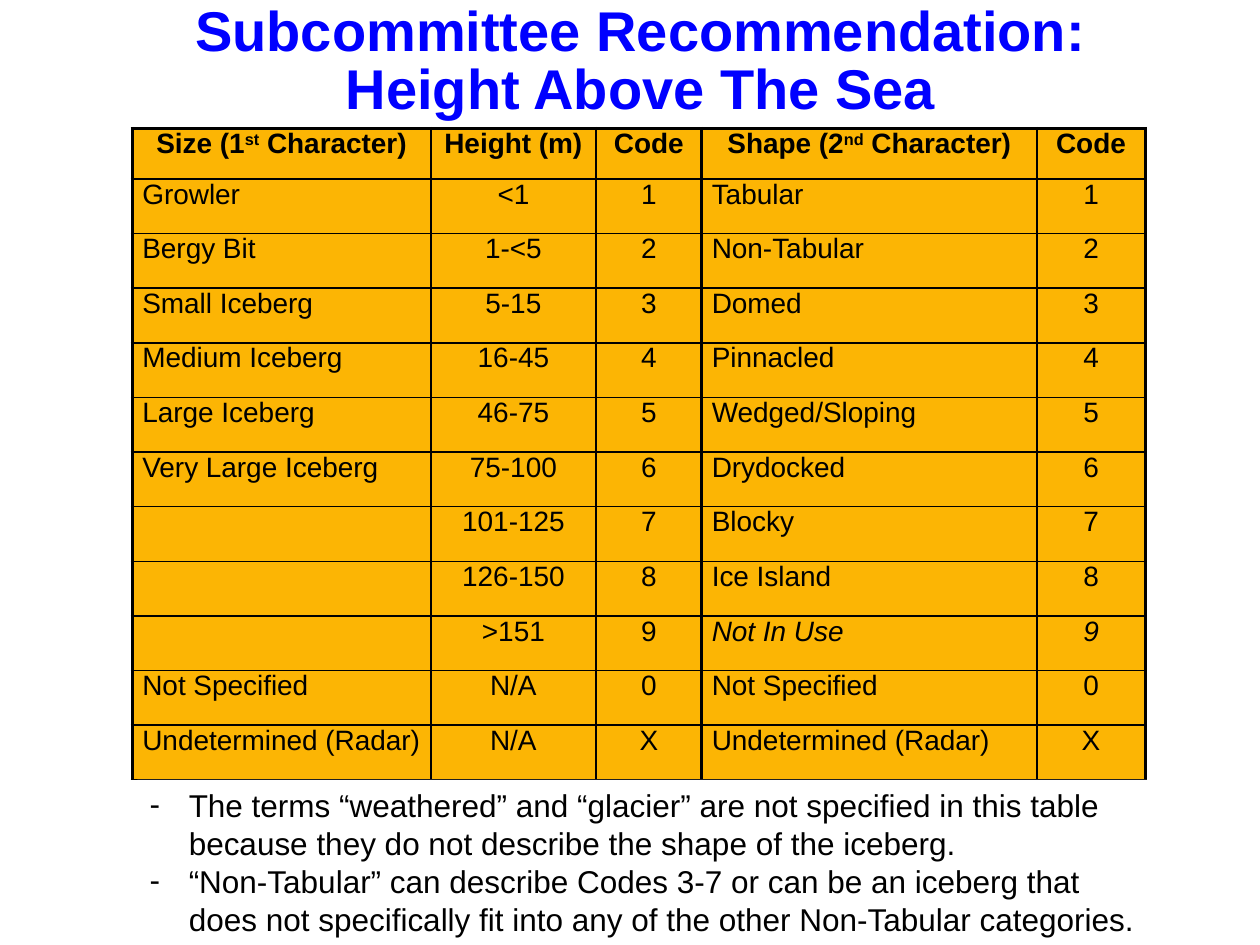
from dataclasses import dataclass

from lxml.etree import SubElement
from pptx import Presentation
from pptx.dml.color import RGBColor
from pptx.enum.shapes import MSO_SHAPE as Shape
from pptx.enum.text import MSO_ANCHOR as Anchor, MSO_AUTO_SIZE as AutoSize, PP_ALIGN as Align
from pptx.oxml.ns import qn
from pptx.util import Inches, Pt

COLORS = {"title": "0000FF", "ink": "000000", "cell": "FCB504", "paper": "FFFFFF"}
FONT = "Arial"
THIN, THICK = 1, 2.25


@dataclass(frozen=True)
class Column:
    header: str
    width: float
    align: Align
    thick_sides: str


@dataclass(frozen=True)
class IcebergCode:
    size: str
    height: str
    shape: str
    code: str
    italic_shape: bool = False

    def texts(self) -> list[str]:
        return [self.size, self.height, self.code, self.shape, self.code]


COLUMNS = [
    Column("Size (1^st^ Character)", 2.37, Align.LEFT, "L"),
    Column("Height (m)", 1.31, Align.CENTER, ""),
    Column("Code", 0.84, Align.CENTER, "R"),
    Column("Shape (2^nd^ Character)", 2.66, Align.LEFT, "L"),
    Column("Code", 0.86, Align.CENTER, "R"),
]
CODES = [
    IcebergCode("Growler", "<1", "Tabular", "1"),
    IcebergCode("Bergy Bit", "1-<5", "Non-Tabular", "2"),
    IcebergCode("Small Iceberg", "5-15", "Domed", "3"),
    IcebergCode("Medium Iceberg", "16-45", "Pinnacled", "4"),
    IcebergCode("Large Iceberg", "46-75", "Wedged/Sloping", "5"),
    IcebergCode("Very Large Iceberg", "75-100", "Drydocked", "6"),
    IcebergCode("", "101-125", "Blocky", "7"),
    IcebergCode("", "126-150", "Ice Island", "8"),
    IcebergCode("", ">151", "Not In Use", "9", italic_shape=True),
    IcebergCode("Not Specified", "N/A", "Not Specified", "0"),
    IcebergCode("Undetermined (Radar)", "N/A", "Undetermined (Radar)", "X"),
]
TITLE = "Subcommittee Recommendation:\nHeight Above The Sea"
NOTES = (
    "The terms “weathered” and “glacier” are not specified in this table "
    "because they do not describe the shape of the iceberg.\n"
    "“Non-Tabular” can describe Codes 3-7 or can be an iceberg that "
    "does not specifically fit into any of the other Non-Tabular categories."
)


def style_font(font, size: float, color: str, bold: bool = False, italic: bool = False) -> None:
    font.name = FONT
    font.size = Pt(size)
    font.bold = bold
    font.italic = italic
    font.color.rgb = RGBColor.from_string(COLORS[color])


def add_borders(cell, thick_sides: str) -> None:
    properties = cell._tc.get_or_add_tcPr()
    for side in "LRTB":
        width = THICK if side in thick_sides else THIN
        line = SubElement(properties, qn(f"a:ln{side}"), w=str(Pt(width)))
        fill = SubElement(line, qn("a:solidFill"))
        SubElement(fill, qn("a:srgbClr"), val=COLORS["ink"])


def fill_cell(cell, text: str, align: Align, thick_sides: str,
              bold: bool = False, italic: bool = False) -> None:
    add_borders(cell, thick_sides)
    cell.fill.solid()
    cell.fill.fore_color.rgb = RGBColor.from_string(COLORS["cell"])
    cell.margin_left = cell.margin_right = Inches(0.08)
    cell.margin_top = cell.margin_bottom = 0
    paragraph = cell.text_frame.paragraphs[0]
    paragraph.alignment = align
    style_font(paragraph.font, 16, "ink", bold, italic)
    if not text:
        return
    for index, part in enumerate(text.split("^")):
        run = paragraph.add_run()
        run.text = part
        style_font(run.font, 16, "ink", bold, italic)
        if index % 2:
            run._r.get_or_add_rPr().set("baseline", "30000")


def add_title(slide) -> None:
    title = slide.shapes.add_textbox(Inches(1.09), 0, Inches(7.99), Inches(1.02))
    frame = title.text_frame
    frame.word_wrap = True
    frame.auto_size = AutoSize.SHAPE_TO_FIT_TEXT
    frame.text = TITLE
    for paragraph in frame.paragraphs:
        paragraph.alignment = Align.CENTER
        paragraph.line_spacing = 0.85
        for run in paragraph.runs:
            style_font(run.font, 32, "title", bold=True)


def add_code_table(slide) -> None:
    table = slide.shapes.add_table(
        len(CODES) + 1, len(COLUMNS), Inches(1.05), Inches(1.02), Inches(8.04), Inches(5.17)
    ).table
    table.rows[0].height = Inches(0.4)
    for column_index, column in enumerate(COLUMNS):
        table.columns[column_index].width = Inches(column.width)
        fill_cell(table.cell(0, column_index), column.header, Align.CENTER,
                  column.thick_sides + "T", bold=True)
    for row_index, entry in enumerate(CODES, start=1):
        table.rows[row_index].height = Inches(4.77 / len(CODES))
        for column_index, (column, text) in enumerate(zip(COLUMNS, entry.texts())):
            fill_cell(table.cell(row_index, column_index), text, column.align,
                      column.thick_sides, italic=entry.italic_shape and column_index >= 3)


def add_notes(slide) -> None:
    notes = slide.shapes.add_shape(
        Shape.RECTANGLE, Inches(1.09), Inches(6.19), Inches(8.03), Inches(1.31)
    )
    notes.shadow.inherit = False
    notes.fill.solid()
    notes.fill.fore_color.rgb = RGBColor.from_string(COLORS["paper"])
    notes.line.fill.background()
    frame = notes.text_frame
    frame.word_wrap = True
    frame.auto_size = AutoSize.SHAPE_TO_FIT_TEXT
    frame.vertical_anchor = Anchor.TOP
    frame.text = NOTES
    for paragraph in frame.paragraphs:
        paragraph.alignment = Align.LEFT
        properties = paragraph._p.get_or_add_pPr()
        properties.set("marL", str(Inches(0.31)))
        properties.set("indent", str(-Inches(0.31)))
        SubElement(properties, qn("a:buFont"), typeface=FONT)
        SubElement(properties, qn("a:buChar"), char="-")
        for run in paragraph.runs:
            style_font(run.font, 18, "ink")


def main() -> None:
    presentation = Presentation()
    presentation.slide_width = Inches(10)
    presentation.slide_height = Inches(7.5)
    slide = presentation.slides.add_slide(presentation.slide_layouts[6])
    add_title(slide)
    add_code_table(slide)
    add_notes(slide)
    presentation.save("out.pptx")


if __name__ == "__main__":
    main()
